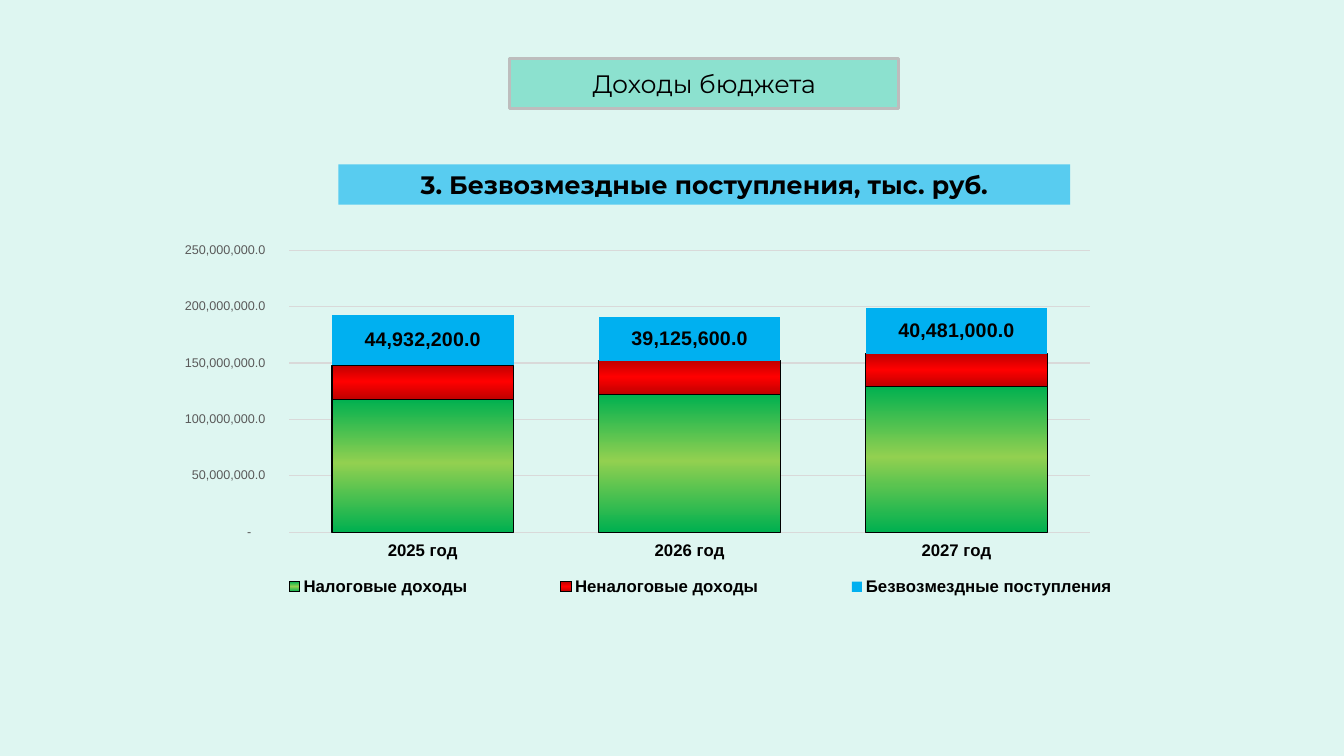
from dataclasses import dataclass

from lxml.etree import SubElement
from pptx import Presentation
from pptx.chart.data import CategoryChartData
from pptx.dml.color import RGBColor
from pptx.enum.chart import XL_CHART_TYPE, XL_LABEL_POSITION, XL_LEGEND_POSITION, XL_TICK_MARK
from pptx.enum.shapes import MSO_SHAPE
from pptx.enum.text import MSO_ANCHOR, MSO_AUTO_SIZE, PP_ALIGN
from pptx.oxml import parse_xml
from pptx.oxml.ns import nsdecls, qn
from pptx.util import Cm, Pt


@dataclass(frozen=True)
class Theme:
    background: str = "DEF6F1"
    badge: str = "8CE1CF"
    badge_line: str = "BDBDBD"
    accent: str = "00B0F0"
    text: str = "000000"
    muted: str = "595959"
    grid: str = "D9D9D9"
    tax: tuple = ("00B050", "92D050")
    non_tax: tuple = ("C00000", "FF0000")
    heading_font: str = "Montserrat"
    chart_font: str = "Arial"
    heading_size: int = 18
    label_size: int = 14
    category_size: int = 12
    chart_size: int = 10
    value_size: int = 9


THEME = Theme()
YEARS = ["2025 год", "2026 год", "2027 год"]
INCOME = [
    ("Налоговые доходы", (118000000, 122000000, 129000000), THEME.tax),
    ("Неналоговые доходы", (30000000, 30000000, 29000000), THEME.non_tax),
    ("Безвозмездные поступления", (44932200, 39125600, 40481000), None),
]
AXIS_FORMAT = '_-* #,##0.0_р_._-;\\-* #,##0.0_р_._-;_-* "-"??_р_._-;_-@_-'


def rgb(color):
    return RGBColor.from_string(color)


def style_font(font, name, size, color=THEME.text, bold=False):
    font.name = name
    font.size = Pt(size)
    font.color.rgb = rgb(color)
    font.bold = bold


def fill_solid(fill, color):
    fill.solid()
    fill.fore_color.rgb = rgb(color)


def write_centred(shape, text, bold=False):
    frame = shape.text_frame
    frame.text = text
    frame.word_wrap = True
    paragraph = frame.paragraphs[0]
    paragraph.alignment = PP_ALIGN.CENTER
    style_font(paragraph.runs[0].font, THEME.heading_font, THEME.heading_size, bold=bold)


def add_title_badge(slide, left, top, width, height):
    """Turn the title placeholder into a rounded, outlined badge."""
    title = slide.shapes.title
    title.left, title.top, title.width, title.height = left, top, width, height
    title.element.spPr.append(
        parse_xml(f'<a:prstGeom {nsdecls("a")} prst="roundRect"><a:avLst/></a:prstGeom>'))
    fill_solid(title.fill, THEME.badge)
    title.line.color.rgb = rgb(THEME.badge_line)
    title.line.width = Pt(2)
    write_centred(title, "Доходы бюджета")
    title.text_frame.auto_size = MSO_AUTO_SIZE.NONE
    title.text_frame.vertical_anchor = MSO_ANCHOR.MIDDLE


def add_heading(slide, left, top, width, height):
    heading = slide.shapes.add_shape(MSO_SHAPE.RECTANGLE, left, top, width, height)
    heading.shadow.inherit = False
    fill_solid(heading.fill, THEME.accent)
    color = heading.element.spPr.find(qn("a:solidFill"))[0]
    SubElement(color, qn("a:alpha")).set("val", "60000")
    heading.line.fill.background()
    write_centred(heading, "3. Безвозмездные поступления, тыс. руб.", bold=True)
    heading.text_frame.vertical_anchor = MSO_ANCHOR.TOP
    heading.text_frame.auto_size = MSO_AUTO_SIZE.SHAPE_TO_FIT_TEXT


def fill_gradient(series, edge, middle):
    """Shade the columns vertically, brightest near the middle."""
    series.format.fill.gradient()
    series.format.fill.gradient_angle = 270
    stops = series.format.fill._fill._gradFill.find(qn("a:gsLst"))
    for stop in list(stops):
        stops.remove(stop)
    for position, color in ((0, edge), (48, middle), (100, edge)):
        stop = SubElement(stops, qn("a:gs"))
        stop.set("pos", str(position * 1000))
        SubElement(stop, qn("a:srgbClr")).set("val", color)
    series.format.line.color.rgb = rgb(THEME.text)
    series.format.line.width = Pt(0.75)


def set_layout(parent, x, y, width, height, inner=False):
    """Give a chart part a fixed place, in fractions of the chart."""
    target = '<c:layoutTarget val="inner"/>' if inner else ""
    values = "".join(f'<c:{tag} val="{value}"/>' for tag, value in
                     (("x", x), ("y", y), ("w", width), ("h", height)))
    layout = parse_xml(
        f'<c:layout {nsdecls("c")}><c:manualLayout>{target}<c:xMode val="edge"/>'
        f'<c:yMode val="edge"/>{values}</c:manualLayout></c:layout>')
    for existing in parent.findall(qn("c:layout")):
        parent.remove(existing)
    parent.insert(0 if inner else 1, layout)


def style_axes(chart):
    for axis in (chart.category_axis, chart.value_axis):
        axis.major_tick_mark = XL_TICK_MARK.OUTSIDE
        axis.format.line.fill.background()
    style_font(chart.category_axis.tick_labels.font,
               THEME.chart_font, THEME.category_size, bold=True)
    values = chart.value_axis
    style_font(values.tick_labels.font, THEME.chart_font, THEME.value_size, THEME.muted)
    values.tick_labels.number_format = AXIS_FORMAT
    values.tick_labels.number_format_is_linked = False
    values.minimum_scale, values.maximum_scale = 0, 250000000
    values.major_unit = 50000000
    values.major_gridlines.format.line.color.rgb = rgb(THEME.grid)
    values.major_gridlines.format.line.width = Pt(0.75)


def style_series(plot):
    plot.gap_width, plot.overlap = 47, 100
    plot.vary_by_categories = False
    for series, (_, _, shades) in zip(plot.series, INCOME):
        series.invert_if_negative = False
        if shades:
            fill_gradient(series, *shades)
            continue
        fill_solid(series.format.fill, THEME.accent)
        labels = series.data_labels
        labels.show_value = True
        labels.number_format = "#,##0.0"
        labels.number_format_is_linked = False
        labels.position = XL_LABEL_POSITION.CENTER
        style_font(labels.font, THEME.chart_font, THEME.label_size, bold=True)


def add_income_chart(slide, left, top, width, height):
    data = CategoryChartData(number_format="#,##0.0")
    data.categories = YEARS
    for name, values, _ in INCOME:
        data.add_series(name, values)
    chart = slide.shapes.add_chart(
        XL_CHART_TYPE.COLUMN_STACKED, left, top, width, height, data).chart
    chart.has_title = False
    style_font(chart.font, THEME.chart_font, THEME.chart_size)
    style_axes(chart)
    style_series(chart.plots[0])
    chart.has_legend = True
    legend = chart.legend
    legend.position = XL_LEGEND_POSITION.BOTTOM
    legend.include_in_layout = False
    style_font(legend.font, THEME.chart_font, THEME.category_size, bold=True)
    chart_root = chart.element.find(qn("c:chart"))
    set_layout(chart_root.find(qn("c:plotArea")), 0.16, 0.1, 0.73, 0.62, inner=True)
    set_layout(chart_root.find(qn("c:legend")), 0.08, 0.8, 0.91, 0.08)


def main():
    presentation = Presentation()
    presentation.slide_width, presentation.slide_height = Cm(33.87), Cm(19.05)
    slide = presentation.slides.add_slide(presentation.slide_layouts[5])
    fill_solid(slide.background.fill, THEME.background)
    add_title_badge(slide, Cm(12.85), Cm(1.47), Cm(9.8), Cm(1.27))
    add_heading(slide, Cm(8.53), Cm(4.14), Cm(18.44), Cm(1.02))
    add_income_chart(slide, Cm(2.87), Cm(5.16), Cm(27.64), Cm(11.46))
    presentation.save("out.pptx")


if __name__ == "__main__":
    main()
